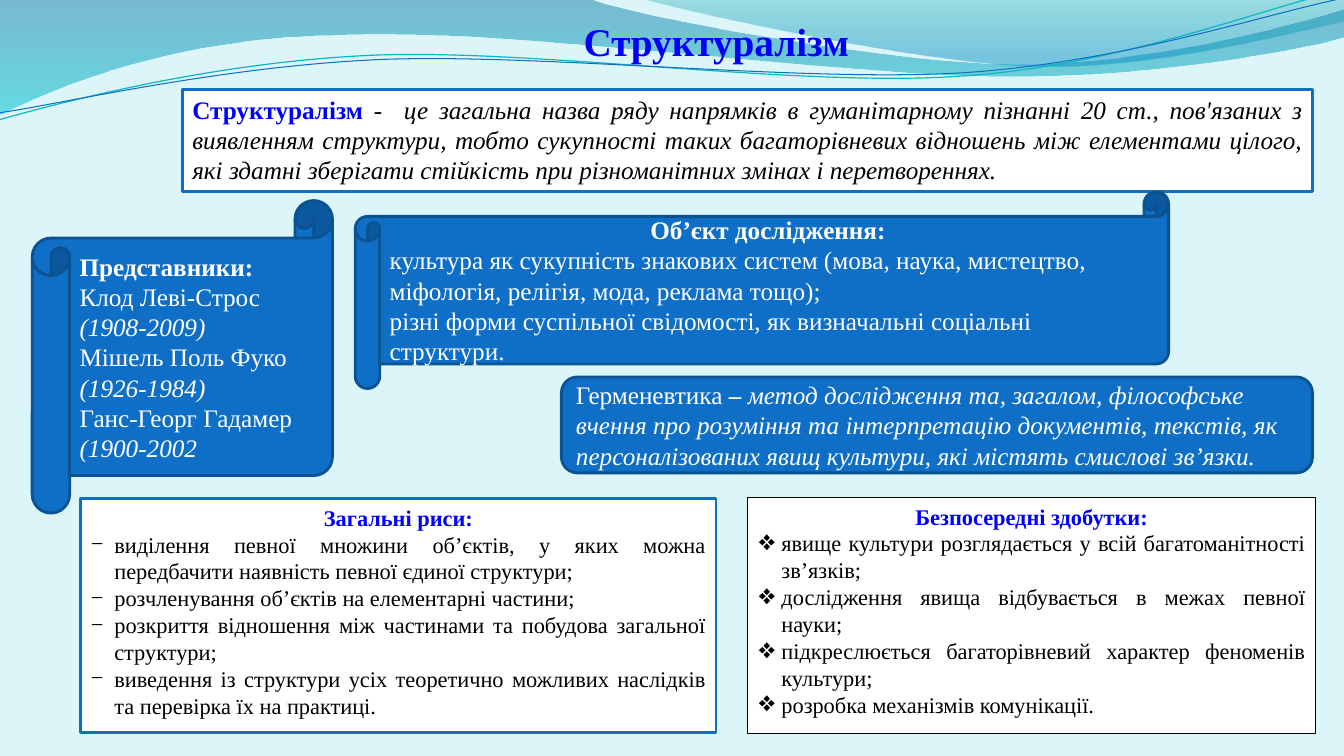
import pptx
import pptx.util
import pptx.dml.color
import pptx.enum.shapes
import pptx.enum.text
from lxml import etree
from pptx.oxml.ns import qn

Pt = pptx.util.Pt
RGBColor = pptx.dml.color.RGBColor
SHAPE = pptx.enum.shapes.MSO_SHAPE
ALIGN = pptx.enum.text.PP_ALIGN
ANCHOR = pptx.enum.text.MSO_ANCHOR

FONT = "Times New Roman"
PALE = RGBColor(0xDB, 0xF5, 0xF9)
BLUE = RGBColor(0x0F, 0x6F, 0xC6)
DARK_BLUE = RGBColor(0x0B, 0x52, 0x92)
HEADING_BLUE = RGBColor(0x00, 0x00, 0xFF)
TEAL = RGBColor(0x0A, 0xB8, 0xBF)
WHITE = RGBColor(0xFF, 0xFF, 0xFF)
BLACK = RGBColor(0x00, 0x00, 0x00)

# Each path is a start point, then steps: one point is a straight line, three a Bezier curve.
WAVES = [
    {"start": (-0.5, 0),
     "steps": [((422.5, -0.5),),
               ((456.5, 12), (637, 45), (728, 45.5)), ((819.5, 45.5), (920, 18.5), (960, 6.5)),
               ((961, 26),),
               ((944, 31.5), (835, 55), (716, 54)), ((597, 54), (366.5, 20), (247, 24.5)),
               ((124, 26), (44, 60), (-0.5, 81.5))],
     "stops": [(0, RGBColor(0x00, 0x74, 0xA1), 45), (1, RGBColor(0x00, 0xC6, 0xCF), 55)]},
    {"start": (460, -0.5),
     "steps": [((489, 8), (654.5, 44.5), (738, 47)), ((821.5, 49.5), (923, 23), (960, 15)),
               ((960, 0),)],
     "stops": [(0, RGBColor(0x00, 0xA1, 0xA9), 30), (0.8, RGBColor(0x00, 0x8B, 0xBF), 45)]},
]
RIPPLES = [
    {"start": (-0.5, 85.5),
     "steps": [((46, 72.5), (152, 44.5), (265.5, 39.5)), ((379.5, 34.5), (569, 62.5), (684, 54.5)),
               ((799, 47.5), (901.5, 6), (958.5, -7))],
     "line": (TEAL, 0.85)},
    {"start": (0, 80.5),
     "steps": [((45.5, 74), (157, 47.5), (272, 42.5)), ((386.5, 38), (573, 59), (687.5, 52)),
               ((803, 44.5), (903.5, 10), (960.5, -1.5))],
     "line": (BLUE, 0.75)},
]

TITLE = "Структуралізм"
TITLE_BOX = (98, 9, 827.25, 41)

# A paragraph is (alignment, runs); a run is (text, style): "b" bold, "i" italic, "h" heading blue.
PANELS = [
    {"kind": SHAPE.RECTANGLE, "box": (130.25, 63.75, 807.5, 73.25), "fill": WHITE, "line": BLUE,
     "ink": BLACK, "anchor": ANCHOR.TOP,
     "text": [(ALIGN.JUSTIFY, [
         ("Структуралізм", "bh"), (" -  ", ""),
         ("це загальна назва ряду напрямків в гуманітарному пізнанні 20 ст., пов'язаних з "
          "виявленням структури, тобто сукупності таких багаторівневих відношень між елементами "
          "цілого, які здатні зберігати стійкість при різноманітних змінах і перетвореннях.", "i")])]},
    {"kind": SHAPE.HORIZONTAL_SCROLL, "box": (23, 143.25, 214.5, 223.25), "fill": BLUE,
     "line": DARK_BLUE, "ink": WHITE, "anchor": ANCHOR.MIDDLE,
     "text": [(ALIGN.LEFT, [("Представники:", "b")]),
              (ALIGN.LEFT, [("Клод Леві-Строс ", ""), ("(1908-2009)", "i")]),
              (ALIGN.LEFT, [("Мішель Поль Фуко ", ""), ("(1926-1984)", "i")]),
              (ALIGN.LEFT, [("Ганс-Георг Гадамер ", ""), ("(1900-2002", "i")])]},
    {"kind": SHAPE.HORIZONTAL_SCROLL, "box": (253.75, 137, 581, 140.5), "fill": BLUE,
     "line": DARK_BLUE, "ink": WHITE, "anchor": ANCHOR.MIDDLE,
     "text": [(ALIGN.CENTER, [("Об’єкт дослідження:", "b")]),
              (ALIGN.LEFT, [("культура як сукупність знакових систем (мова, наука, мистецтво, "
                             "міфологія, релігія, мода, реклама тощо);", "")]),
              (ALIGN.LEFT, [("різні форми суспільної свідомості, як визначальні соціальні "
                             "структури.", "")])]},
    {"kind": SHAPE.ROUNDED_RECTANGLE, "box": (401, 269.25, 536.5, 68.5), "fill": BLUE,
     "line": DARK_BLUE, "ink": WHITE, "anchor": ANCHOR.MIDDLE,
     "text": [(ALIGN.LEFT, [
         ("Герменевтика", ""), (" – ", "b"),
         ("метод дослідження та, загалом, філософське вчення про розуміння та інтерпретацію "
          "документів, текстів, як персоналізованих явищ культури, які містять смислові "
          "зв’язки.", "i")])]},
]
LISTS = [
    {"box": (57.75, 356.25, 453.75, 167.25), "line": (BLUE, 2), "bullet": "−",
     "heading": "Загальні риси:",
     "items": ["виділення певної множини об’єктів, у яких можна передбачити наявність певної "
               "єдиної структури;",
               "розчленування об’єктів на елементарні частини;",
               "розкриття відношення між частинами та побудова загальної структури;",
               "виведення із структури усіх теоретично можливих наслідків та перевірка їх на "
               "практиці."]},
    {"box": (534.25, 355.5, 405.5, 168.5), "line": (BLACK, 0.75), "bullet": "❖",
     "heading": "Безпосередні здобутки:",
     "items": ["явище культури розглядається у всій багатоманітності зв’язків;",
               "дослідження явища відбувається в межах певної науки;",
               "підкреслюється багаторівневий характер феноменів культури;",
               "розробка механізмів комунікації."]},
]
HANG = 16.75


def draw_path(shapes, path, closed):
    """Draw a freeform and turn each three-point step into a Bezier curve."""
    builder = shapes.build_freeform(*map(Pt, path["start"]))
    points = [tuple(map(Pt, point)) for step in path["steps"] for point in step]
    builder.add_line_segments(points, close=closed)
    outline = builder.convert_to_shape()
    outline.shadow.inherit = False
    segments = iter(list(outline._element.iter(qn("a:lnTo"))))
    for step in path["steps"]:
        first, *others = [next(segments) for _ in step]
        if others:
            first.tag = qn("a:cubicBezTo")
            for other in others:
                first.append(other[0])
                other.getparent().remove(other)
    return outline


def place(shape, box):
    shape.left, shape.top, shape.width, shape.height = map(Pt, box)


def paint(shape, fill, line, width):
    shape.fill.solid()
    shape.fill.fore_color.rgb = fill
    shape.line.color.rgb = line
    shape.line.width = Pt(width)


def add_run(paragraph, text, size, color, bold=False, italic=False):
    run = paragraph.add_run()
    run.text = text
    run.font.name, run.font.size = FONT, Pt(size)
    run.font.bold, run.font.italic = bold, italic
    run.font.color.rgb = color


def next_paragraph(frame, index, align):
    paragraph = frame.add_paragraph() if index else frame.paragraphs[0]
    paragraph.alignment = align
    paragraph.space_before = Pt(0)
    return paragraph


def set_bullet(paragraph, char):
    props = paragraph._p.get_or_add_pPr()
    hang = Pt(HANG) if char else 0
    props.set("marL", str(hang))
    props.set("indent", str(-hang))
    if char:
        etree.SubElement(props, qn("a:buFont")).set("typeface", FONT)
        etree.SubElement(props, qn("a:buChar")).set("char", char)
    else:
        etree.SubElement(props, qn("a:buNone"))


deck = pptx.Presentation()
deck.slide_width, deck.slide_height = Pt(960), Pt(540)
slide = deck.slides.add_slide(deck.slide_layouts.get_by_name("Two Content"))
shapes = slide.shapes
slide.background.fill.solid()
slide.background.fill.fore_color.rgb = PALE

for wave in WAVES:
    band = draw_path(shapes, wave, True)
    band.line.fill.background()
    band.fill.gradient()
    band.fill.gradient_angle = 270
    for stop, (position, color, _) in zip(band.fill.gradient_stops, wave["stops"]):
        stop.position = position
        stop.color.rgb = color
    for tint, (_, _, opacity) in zip(band._element.spPr.iter(qn("a:srgbClr")), wave["stops"]):
        etree.SubElement(tint, qn("a:alpha")).set("val", str(opacity * 1000))

for ripple in RIPPLES:
    curve = draw_path(shapes, ripple, False)
    curve.fill.background()
    curve.line.color.rgb = ripple["line"][0]
    curve.line.width = Pt(ripple["line"][1])

title = shapes.title
place(title, TITLE_BOX)
add_run(next_paragraph(title.text_frame, 0, ALIGN.CENTER), TITLE, 28, HEADING_BLUE, bold=True)
shapes._spTree.append(title._element)  # in front of the waves

for panel in PANELS:
    box = shapes.add_shape(panel["kind"], *map(Pt, panel["box"]))
    box.shadow.inherit = False
    paint(box, panel["fill"], panel["line"], 2)
    box.text_frame.word_wrap = True
    box.text_frame.vertical_anchor = panel["anchor"]
    for index, (align, runs) in enumerate(panel["text"]):
        paragraph = next_paragraph(box.text_frame, index, align)
        for text, style in runs:
            color = HEADING_BLUE if "h" in style else panel["ink"]
            add_run(paragraph, text, 18, color, "b" in style, "i" in style)

# The title now comes last in the tree, so the two list holders are picked by index.
for holder_index, traits in enumerate(LISTS, 1):
    holder = slide.placeholders[holder_index]
    place(holder, traits["box"])
    paint(holder, WHITE, *traits["line"])
    frame = holder.text_frame
    frame.auto_size = pptx.enum.text.MSO_AUTO_SIZE.NONE
    frame.vertical_anchor = ANCHOR.TOP
    heading = next_paragraph(frame, 0, ALIGN.CENTER)
    set_bullet(heading, None)
    add_run(heading, traits["heading"], 16, HEADING_BLUE, bold=True)
    for index, item in enumerate(traits["items"], 1):
        paragraph = next_paragraph(frame, index, ALIGN.JUSTIFY)
        set_bullet(paragraph, traits["bullet"])
        add_run(paragraph, item, 16, BLACK)

deck.save("out.pptx")
